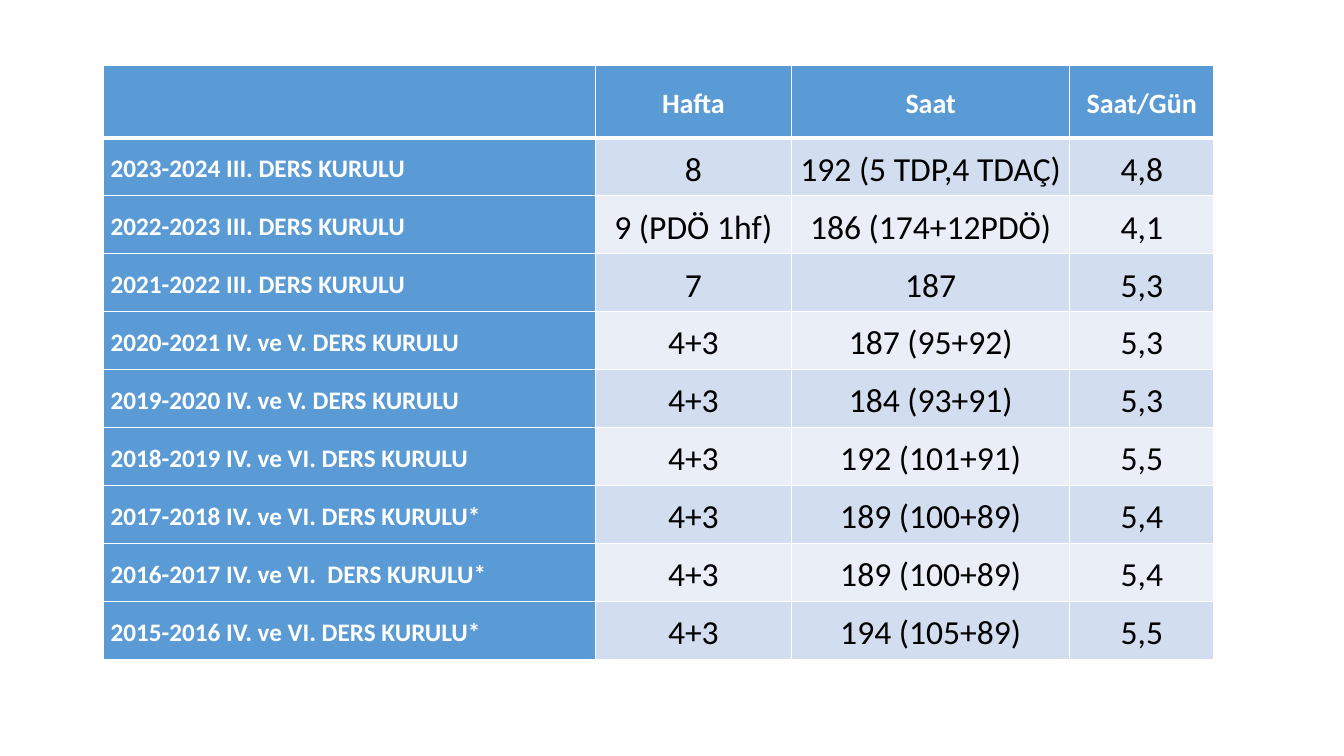
from lxml import etree
from pptx import Presentation
from pptx.dml.color import RGBColor
from pptx.enum.text import MSO_ANCHOR, PP_ALIGN
from pptx.oxml.ns import qn
from pptx.util import Cm, Pt

CENTER = PP_ALIGN.CENTER
JUSTIFY = PP_ALIGN.JUSTIFY
MIDDLE = MSO_ANCHOR.MIDDLE

COLORS = {
    "heading": "5B9BD5",
    "odd_row": "D2DEEF",
    "even_row": "EAEFF7",
    "white": "FFFFFF",
    "black": "000000",
}
BLANK_LAYOUT = 6
COLUMN_WIDTHS = [12.4, 4.95, 7.01, 3.63]
HEADER_HEIGHT = 1.83
ROW_HEIGHT = 1.46
HEADINGS = ["", "Hafta", "Saat", "Saat/Gün"]
COURSES = [
    ["2023-2024 III. DERS KURULU", "8", "192 (5 TDP,4 TDAÇ)", "4,8"],
    ["2022-2023 III. DERS KURULU", "9 (PDÖ 1hf)", "186 (174+12PDÖ)", "4,1"],
    ["2021-2022 III. DERS KURULU", "7", "187", "5,3"],
    ["2020-2021 IV. ve V. DERS KURULU", "4+3", "187 (95+92)", "5,3"],
    ["2019-2020 IV. ve V. DERS KURULU", "4+3", "184 (93+91)", "5,3"],
    ["2018-2019 IV. ve VI. DERS KURULU", "4+3", "192 (101+91)", "5,5"],
    ["2017-2018 IV. ve VI. DERS KURULU*", "4+3", "189 (100+89)", "5,4"],
    ["2016-2017 IV. ve VI.  DERS KURULU*", "4+3", "189 (100+89)", "5,4"],
    ["2015-2016 IV. ve VI. DERS KURULU*", "4+3", "194 (105+89)", "5,5"],
]


def write_text(frame, text, size=24, color="black", bold=False, align=CENTER):
    paragraph = frame.paragraphs[0]
    paragraph.alignment = align
    paragraph.line_spacing = 1.15
    run = paragraph.add_run()
    run.text = text
    run.font.name = "Calibri"
    run.font.size = Pt(size)
    run.font.bold = bold
    run.font.color.rgb = RGBColor.from_string(COLORS[color])


def draw_borders(cell, top=1, bottom=1):
    properties = cell._tc.get_or_add_tcPr()
    for side, width in (("L", 1), ("R", 1), ("T", top), ("B", bottom)):
        line = etree.SubElement(properties, qn(f"a:ln{side}"), w=str(Pt(width)))
        fill = etree.SubElement(line, qn("a:solidFill"))
        etree.SubElement(fill, qn("a:srgbClr"), val=COLORS["white"])


def format_cell(cell, fill, **borders):
    draw_borders(cell, **borders)
    cell.fill.solid()
    cell.fill.fore_color.rgb = RGBColor.from_string(COLORS[fill])
    cell.vertical_anchor = MIDDLE
    cell.margin_left = cell.margin_right = Cm(0.19)
    cell.margin_top = cell.margin_bottom = 0


def fill_header(table):
    for column, heading in enumerate(HEADINGS):
        cell = table.cell(0, column)
        format_cell(cell, "heading", bottom=3)
        if heading:
            write_text(cell.text_frame, heading, size=20, color="white", bold=True)


def fill_course(table, row, course):
    band = "odd_row" if row % 2 else "even_row"
    top = 3 if row == 1 else 1
    for column, text in enumerate(course):
        cell = table.cell(row, column)
        if column == 0:
            format_cell(cell, "heading", top=top)
            write_text(cell.text_frame, text, size=18, color="white",
                       bold=True, align=JUSTIFY)
        else:
            format_cell(cell, band, top=top)
            write_text(cell.text_frame, text)


def add_course_table(slide):
    height = HEADER_HEIGHT + ROW_HEIGHT * len(COURSES)
    table = slide.shapes.add_table(
        len(COURSES) + 1, len(HEADINGS), Cm(2.6), Cm(1.64),
        Cm(sum(COLUMN_WIDTHS)), Cm(height)).table
    table.first_col = True
    for column, width in zip(table.columns, COLUMN_WIDTHS):
        column.width = Cm(width)
    for row in table.rows:
        row.height = Cm(ROW_HEIGHT)
    table.rows[0].height = Cm(HEADER_HEIGHT)
    fill_header(table)
    for row, course in enumerate(COURSES, start=1):
        fill_course(table, row, course)


def main():
    presentation = Presentation()
    presentation.slide_width = Cm(33.87)
    presentation.slide_height = Cm(19.05)
    slide = presentation.slides.add_slide(presentation.slide_layouts[BLANK_LAYOUT])
    add_course_table(slide)
    presentation.save("out.pptx")


if __name__ == "__main__":
    main()
